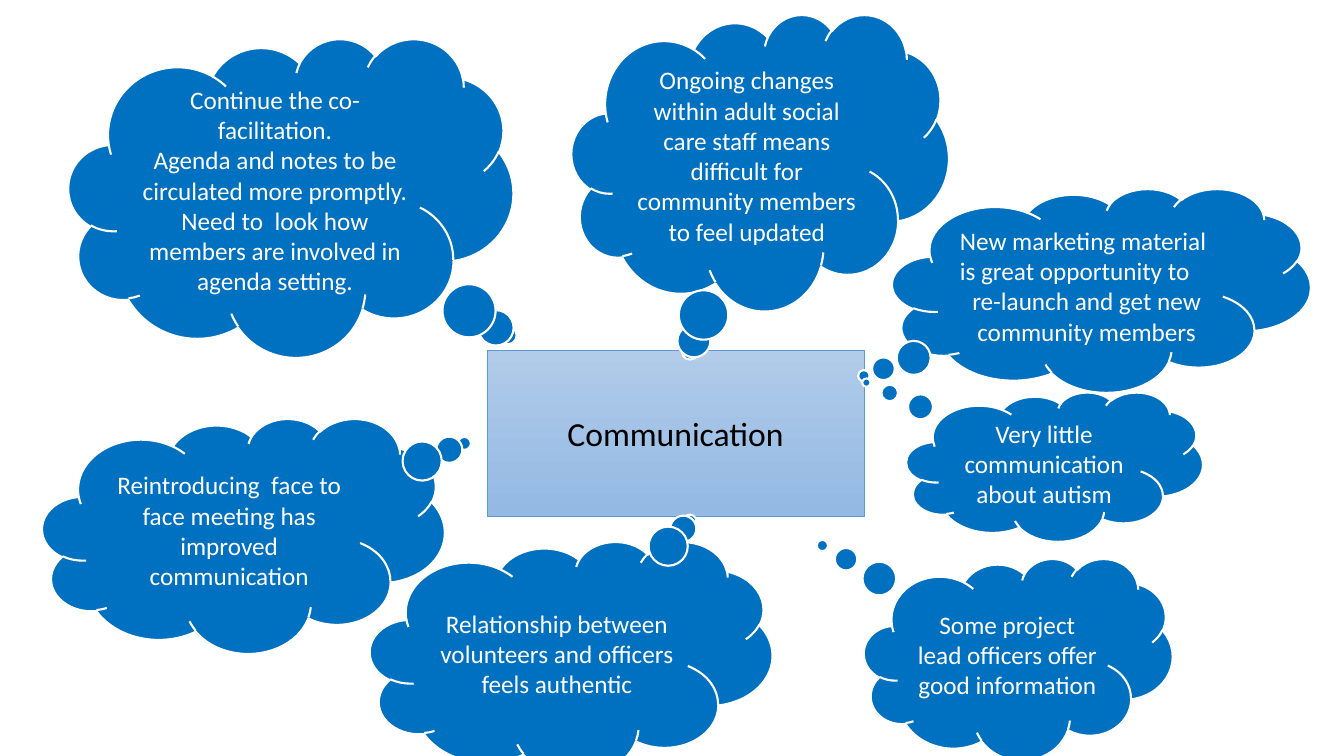
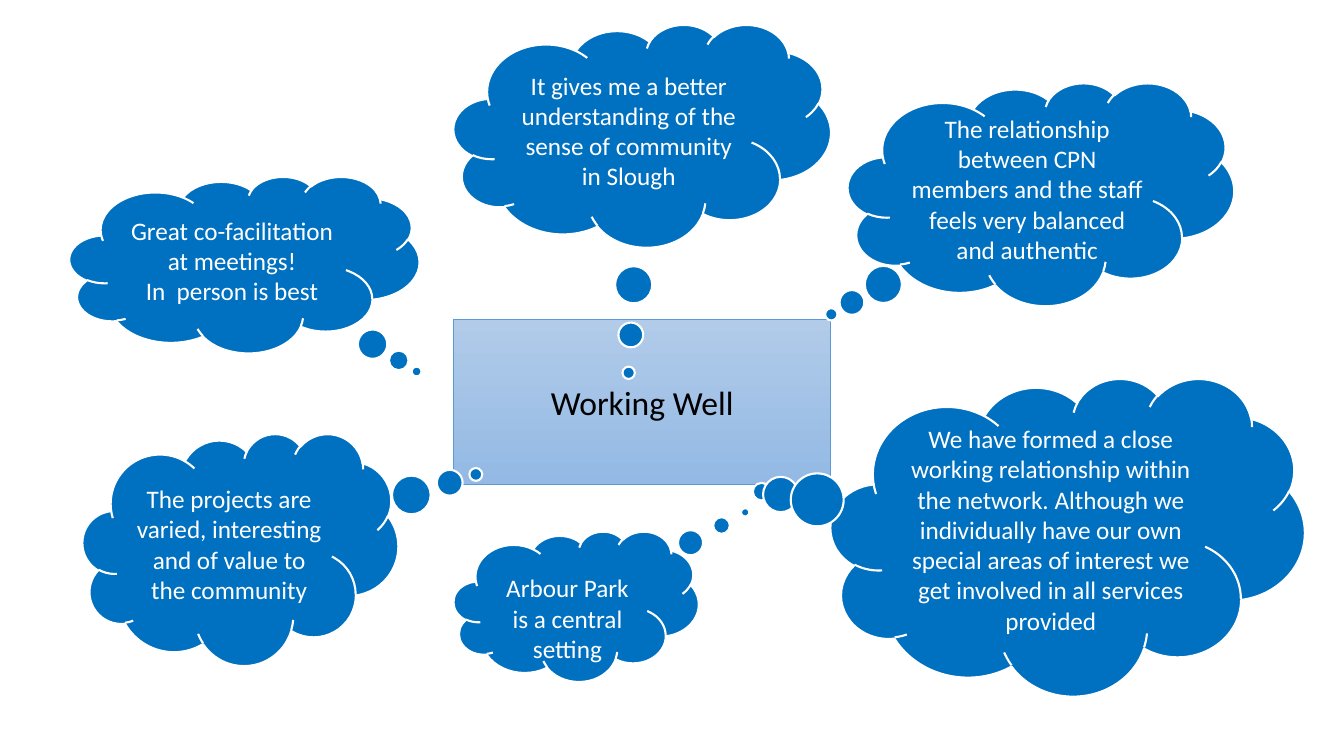
from pptx import Presentation
from pptx.dml.color import RGBColor
from pptx.enum.shapes import MSO_SHAPE as SHAPE
from pptx.enum.text import MSO_ANCHOR as ANCHOR, PP_ALIGN as ALIGN
from pptx.util import Inches, Pt

FONT = "Calibri"
COLORS = {
    "topic_top": "B1CBE9",
    "topic_bottom": "93B9E4",
    "topic_line": "5B9BD5",
    "topic_text": "000000",
    "cloud": "0070C0",
    "cloud_line": "FFFFFF",
    "cloud_text": "FFFFFF",
}
TOPIC_SIZE = (3.74, 1.64)
LEFT, CENTER = ALIGN.LEFT, ALIGN.CENTER

COMMUNICATION = [
    ((8.57, 5.54, 3.06, 2), (-0.635, -0.564),
     ["Some project lead officers offer good information"]),
    ((5.67, 0.14, 3.74, 2.94), (-0.186, 0.638),
     ["Ongoing changes within adult social care staff means difficult for "
      "community members to feel updated"]),
    ((0.42, 4.15, 3.99, 2.33), (0.549, -0.393),
     ["Reintroducing  face to face meeting has improved communication"]),
    ((8.85, 1.87, 4.15, 2.02), (-0.568, 0.42),
     [("New marketing material is great opportunity to", LEFT),
      "re-launch and get new community members"]),
    ((0.68, 0.38, 4.41, 3.16), (0.488, 0.433),
     ["Continue the co-facilitation.",
      "Agenda and notes to be circulated more promptly.",
      "Need to  look how members are involved in agenda setting."]),
    ((3.67, 5.37, 3.99, 2.33), (0.295, -0.586),
     ["Relationship between volunteers and officers feels authentic"]),
    ((8.99, 3.89, 2.94, 1.48), (-0.635, -0.564),
     ["Very little communication about autism"]),
]

WORKING_WELL = [
    ((8.41, 0.82, 3.83, 2.21), (-0.543, 0.54),
     ["The relationship between CPN members and the staff feels very "
      "balanced and authentic"]),
    ((0.69, 1.75, 3.47, 1.75), (0.492, 0.606),
     ["Great co-facilitation at meetings!", "In  person is best"]),
    ((0.82, 4.3, 3.13, 2.3), (0.746, -0.323),
     ["The projects are varied, interesting and of value to the community"]),
    ((4.5, 0.24, 3.74, 2.21), (-0.036, 1.065),
     ["It gives me a better understanding of the sense of community "
      "in Slough"]),
    ((8.24, 3.75, 4.7, 3.15), (-0.646, -0.142),
     ["We have formed a close working relationship within the network. "
      "Although we individually have our own special areas of interest we "
      "get involved in all services provided"]),
    ((4.5, 5.27, 2.43, 1.49), (0.69, -0.626),
     ["Arbour Park is a central setting"], 0.35),
]


def rgb(name):
    return RGBColor.from_string(COLORS[name])


def add_box(s, kind, box, line, width):
    sp = s.shapes.add_shape(kind, *map(Inches, box))
    sp.shadow.inherit = False
    sp.line.color.rgb = rgb(line)
    sp.line.width = Pt(width)
    return sp


def write(sp, paragraphs, size, color):
    tf = sp.text_frame
    tf.word_wrap = True
    tf.vertical_anchor = ANCHOR.MIDDLE
    for i, item in enumerate(paragraphs):
        text, align = item if isinstance(item, tuple) else (item, CENTER)
        p = tf.add_paragraph() if i else tf.paragraphs[0]
        p.alignment = align
        r = p.add_run()
        r.text = text
        r.font.name = FONT
        r.font.size = Pt(size)
        r.font.color.rgb = rgb(color)


def add_topic(s, left, top, text):
    sp = add_box(s, SHAPE.RECTANGLE, (left, top, *TOPIC_SIZE), "topic_line", 0.5)
    sp.fill.gradient()
    sp.fill.gradient_angle = 270
    for stop, position, name in zip(sp.fill.gradient_stops, (0, 1),
                                    ("topic_top", "topic_bottom")):
        stop.position = position
        stop.color.rgb = rgb(name)
    write(sp, [text], 24, "topic_text")


def add_cloud(s, box, tail, paragraphs, inset_top=0.05):
    sp = add_box(s, SHAPE.CLOUD_CALLOUT, box, "cloud_line", 1.5)
    sp.adjustments[0], sp.adjustments[1] = tail
    sp.fill.solid()
    sp.fill.fore_color.rgb = rgb("cloud")
    sp.text_frame.margin_top = Inches(inset_top)
    write(sp, paragraphs, 18, "cloud_text")


def add_feedback_slide(prs, topic, left, top, clouds):
    s = prs.slides.add_slide(prs.slide_layouts[6])
    add_topic(s, left, top, topic)
    for cloud in clouds:
        add_cloud(s, *cloud)


def main():
    prs = Presentation()
    prs.slide_width = Inches(13.33)
    prs.slide_height = Inches(7.5)
    add_feedback_slide(prs, "Communication", 4.83, 3.48, COMMUNICATION)
    add_feedback_slide(prs, "Working Well", 4.5, 3.17, WORKING_WELL)
    prs.save("out.pptx")


if __name__ == "__main__":
    main()
